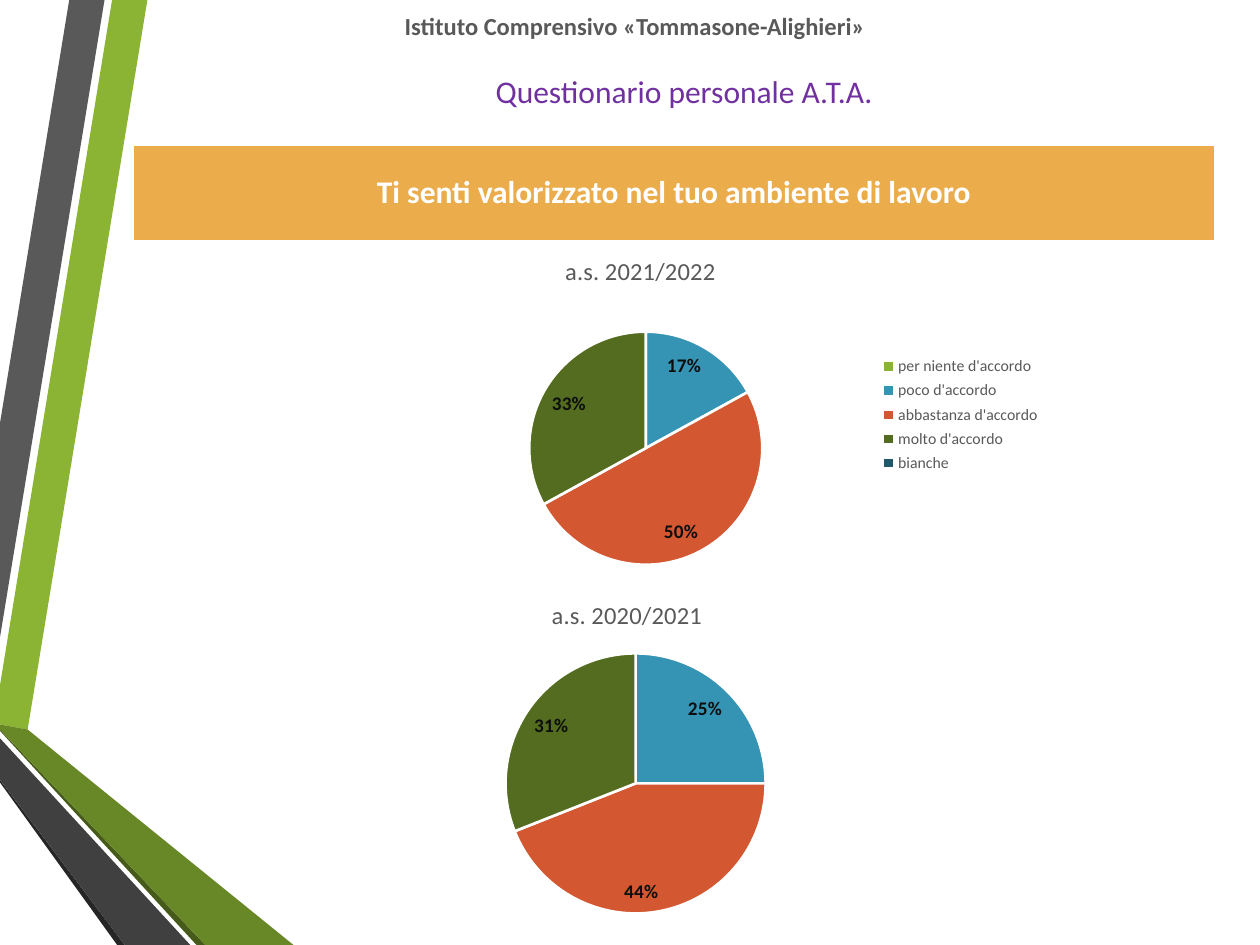
from lxml import etree
from pptx import Presentation
from pptx.chart.data import CategoryChartData
from pptx.dml.color import RGBColor
from pptx.enum.chart import XL_CHART_TYPE as ChartType
from pptx.enum.chart import XL_LABEL_POSITION as LabelPos
from pptx.enum.chart import XL_LEGEND_POSITION as LegendPos
from pptx.enum.text import MSO_ANCHOR as Anchor
from pptx.enum.text import PP_ALIGN as Align
from pptx.oxml.ns import qn
from pptx.util import Inches, Pt

# Content
SCHOOL = "Istituto Comprensivo «Tommasone-Alighieri»"
SURVEY = "Questionario personale A.T.A."
QUESTION = "Ti senti valorizzato nel tuo ambiente di lavoro"
ANSWERS = ["per niente d'accordo", "poco d'accordo", "abbastanza d'accordo",
           "molto d'accordo", "bianche"]

# Frames are inches; inner layouts are shares (x, y, w, h) of the chart
YEARS = [
    {"title": "a.s. 2021/2022", "answers": ANSWERS, "values": [0, 17, 50, 33, 0],
     "frame": (3.35, 1.87, 5, 2.79), "title_at": (0.22, 0.04),
     "pie_at": (0.17, 0.27, 0.37, 0.67), "legend_at": (0.72, 0.33, 0.27, 0.36)},
    {"title": "a.s. 2020/2021", "answers": list("12345"), "values": [0, 25, 44, 31, 0],
     "frame": (3.2, 4.6, 3.69, 2.79), "title_at": (0.31, 0.04),
     "pie_at": (0.22, 0.21, 0.56, 0.74), "legend_at": None},
]

FONT = "Calibri"
COLORS = {"green": "8BB434", "gray": "595959", "black": "262626", "moss": "465A1A",
          "olive": "688727", "charcoal": "404040", "banner": "EBAC4B",
          "purple": "7030A0", "white": "FFFFFF", "label": "0D0D0D"}
SLICES = ["8BB434", "3594B4", "D35731", "536C1F", "20596C"]

# Ribbon outlines in inches
RIBBONS = [
    ("green", [(0, 5.44), (0, 5.75), (0.22, 5.79), (1.17, 0), (0.89, 0)]),
    ("gray", [(0.83, 0), (0.55, 0), (0, 3.36), (0, 5.06)]),
    ("black", [(0, 6.19), (0, 6.21), (0.93, 7.5), (0.99, 7.5)]),
    ("moss", [(0, 5.79), (0, 5.8), (1.56, 7.5), (1.63, 7.5)]),
    ("olive", [(0, 5.79), (1.63, 7.5), (2.33, 7.5), (0.22, 5.79), (0, 5.75)]),
    ("charcoal", [(0, 6.19), (0.99, 7.5), (1.51, 7.5), (0, 5.86)]),
]


def rgb(name):
    return RGBColor.from_string(COLORS.get(name, name))


def style(font, size, color, bold=False):
    font.name, font.size, font.bold = FONT, Pt(size), bold
    font.color.rgb = rgb(color)


def write(frame, text, size, color, bold=False, anchor=Anchor.TOP):
    frame.word_wrap = True
    frame.vertical_anchor = anchor
    line = frame.paragraphs[0]
    line.text, line.alignment = text, Align.CENTER
    style(line.font, size, color, bold)


def place(part, shares, inner=False):
    """Give a chart part a manual layout in shares of the chart."""
    for old in part.findall(qn("c:layout")):
        part.remove(old)
    layout = etree.Element(qn("c:layout"))
    manual = etree.SubElement(layout, qn("c:manualLayout"))
    if inner:
        etree.SubElement(manual, qn("c:layoutTarget")).set("val", "inner")
    for key in ("xMode", "yMode"):
        etree.SubElement(manual, qn("c:" + key)).set("val", "edge")
    for key, share in zip("xywh", shares):
        etree.SubElement(manual, qn("c:" + key)).set("val", str(share))
    before = [qn("c:tx"), qn("c:legendPos"), qn("c:legendEntry")]
    part.insert(sum(child.tag in before for child in part), layout)


def add_pie(slide, year):
    data = CategoryChartData()
    data.categories = year["answers"]
    data.add_series("Series 1", year["values"])
    chart = slide.shapes.add_chart(
        ChartType.PIE, *map(Inches, year["frame"]), data).chart
    style(chart.font, 10, "000000")

    title = chart.chart_title
    title.text_frame.text = year["title"]
    style(title.text_frame.paragraphs[0].font, 14, "gray")
    title.include_in_layout = False
    place(title._element, year["title_at"])

    plot = chart.plots[0]
    plot.vary_by_categories = True
    place(chart._chartSpace.chart.plotArea, year["pie_at"], inner=True)
    for i, color in enumerate(SLICES):
        look = plot.series[0].points[i].format
        look.fill.solid()
        look.fill.fore_color.rgb = rgb(color)
        look.line.color.rgb = rgb("white")
        look.line.width = Pt(1.5)

    # The number format hides the empty answers
    plot.has_data_labels = True
    labels = plot.data_labels
    labels.show_percentage, labels.show_value = True, False
    labels.number_format, labels.number_format_is_linked = "0%;;;", False
    labels.position = LabelPos.INSIDE_END
    style(labels.font, 11, "label", True)

    chart.has_legend = year["legend_at"] is not None
    if chart.has_legend:
        chart.legend.position = LegendPos.RIGHT
        chart.legend.include_in_layout = False
        style(chart.legend.font, 9, "gray")
        place(chart.legend._element, year["legend_at"])


def main():
    prs = Presentation()
    prs.slide_width, prs.slide_height = Inches(10), Inches(7.5)
    slide = prs.slides.add_slide(prs.slide_layouts[5])

    # Ribbons at the left edge
    ribbons = slide.shapes.add_group_shape()
    for color, points in RIBBONS:
        corners = [(Inches(x), Inches(y)) for x, y in points]
        outline = ribbons.shapes.build_freeform(*corners[0])
        outline.add_line_segments(corners[1:], close=True)
        ribbon = outline.convert_to_shape()
        ribbon.shadow.inherit = False
        ribbon.fill.solid()
        ribbon.fill.fore_color.rgb = rgb(color)
        ribbon.line.fill.background()

    # Question banner
    table = slide.shapes.add_table(
        1, 1, *map(Inches, (1.06, 1.15, 8.58, 0.76))).table
    banner = table.cell(0, 0)
    banner.fill.solid()
    banner.fill.fore_color.rgb = rgb("banner")
    write(banner.text_frame, QUESTION, 18, "white", True)
    banner.vertical_anchor = Anchor.MIDDLE

    # Headings
    school = slide.shapes.add_textbox(*map(Inches, (1.14, 0.04, 7.8, 0.34)))
    write(school.text_frame, SCHOOL, 14, "gray", True)
    survey = slide.shapes.title
    survey.left, survey.top, survey.width, survey.height = map(
        Inches, (1.14, 0.52, 8.58, 0.4))
    write(survey.text_frame, SURVEY, 18, "purple")

    # One pie per school year
    for year in YEARS:
        add_pie(slide, year)

    prs.save("out.pptx")


if __name__ == "__main__":
    main()
